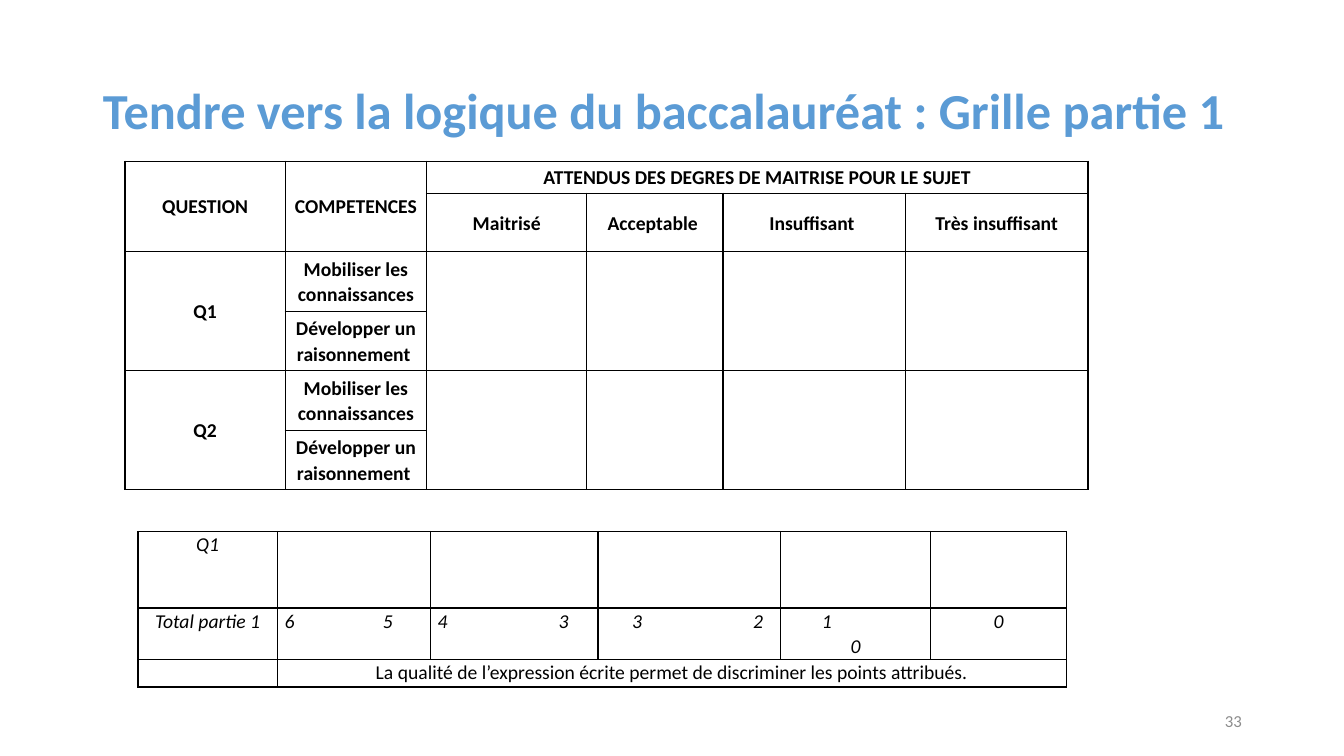
from lxml.etree import SubElement
from pptx import Presentation
from pptx.dml.color import RGBColor
from pptx.enum.text import MSO_ANCHOR as Anchor, MSO_AUTO_SIZE as AutoSize, PP_ALIGN as Align
from pptx.oxml.ns import qn
from pptx.util import Cm, Pt

FONT = "Calibri"
BLACK = "000000"
LEVELS = ["Maitrisé", "Acceptable ", "Insuffisant ", "Très insuffisant"]
SKILLS = ["Mobiliser les connaissances", "Développer un raisonnement "]
QUESTIONS = ["Q1", "Q2"]
SCORES = [("6\t5", [2.48]), ("4\t3", [3.05]), ("\t3\t2", [0.68, 3.73])]
QUALITY = "La qualité de l’expression écrite permet de discriminer les points attribués."


def color(value):
    """Turn a hex string into a colour."""
    return RGBColor.from_string(value)


def add_run(para, text, size, hue, bold=False, italic=False):
    """Add one formatted run to a paragraph."""
    span = para.add_run()
    span.text = text
    font = span.font
    font.name, font.size, font.bold, font.italic = FONT, Pt(size), bold, italic
    font.color.rgb = color(hue)


def style_cell(cell):
    """Give a cell thin black borders, no fill, small margins and a 14 pt empty line."""
    properties = cell._tc.get_or_add_tcPr()
    for side in ("lnL", "lnR", "lnT", "lnB"):
        line = SubElement(properties, qn(f"a:{side}"), w=str(Pt(1)))
        fill = SubElement(line, qn("a:solidFill"))
        SubElement(fill, qn("a:srgbClr"), val=BLACK)
    cell.fill.background()
    cell.margin_left = cell.margin_right = Cm(0.18)
    cell.margin_top = cell.margin_bottom = 0
    SubElement(cell.text_frame.paragraphs[0]._p, qn("a:endParaRPr"), sz="1400")


def add_grid(page, left, top, widths, heights):
    """Add a bordered table with the given column widths and row heights in cm."""
    frame = page.shapes.add_table(len(heights), len(widths), Cm(left), Cm(top),
                                  Cm(sum(widths)), Cm(sum(heights)))
    table = frame.table
    table.first_row = table.horz_banding = False
    for column, width in zip(table.columns, widths):
        column.width = Cm(width)
    for row, height in zip(table.rows, heights):
        row.height = Cm(height)
    for cell in table.iter_cells():
        style_cell(cell)
    return table


def write(para, text, align=Align.CENTER, tabs=(), **look):
    """Write a table paragraph, with tab stops in cm."""
    para.alignment, para.line_spacing = align, 1.07
    if tabs:
        stops = SubElement(para._p.get_or_add_pPr(), qn("a:tabLst"))
        for stop in tabs:
            SubElement(stops, qn("a:tab"), pos=str(Cm(stop)), algn="l")
    add_run(para, text, 14, BLACK, **look)


def write_header(cell, text):
    """Write bold text in the middle of a cell."""
    cell.vertical_anchor = Anchor.MIDDLE
    write(cell.text_frame.paragraphs[0], text, bold=True)


def add_title(page, text):
    """Place and fill the title placeholder."""
    box = page.shapes.title
    box.left, box.top, box.width, box.height = Cm(2.34), Cm(1.02), Cm(29.21), Cm(3.68)
    frame = box.text_frame
    frame.auto_size, frame.vertical_anchor = AutoSize.NONE, Anchor.MIDDLE
    para = frame.paragraphs[0]
    para.alignment, para.line_spacing = Align.LEFT, 0.9
    add_run(para, text, 36, "5B9BD5", bold=True)


def add_skill_grid(page):
    """Add the grid of questions, skills and mastery levels."""
    table = add_grid(page, 3.15, 4.06, [4.04, 3.56, 4.04, 3.43, 4.6, 4.6],
                     [0.81, 1.47] + [1.5] * 4)
    for column, heading in enumerate(["QUESTION", "COMPETENCES"]):
        table.cell(0, column).merge(table.cell(1, column))
        write_header(table.cell(0, column), heading)
    table.cell(0, 2).merge(table.cell(0, 5))
    write_header(table.cell(0, 2), "ATTENDUS DES DEGRES DE MAITRISE POUR LE SUJET")
    for column, level in enumerate(LEVELS, 2):
        write_header(table.cell(1, column), level)
    for index, question in enumerate(QUESTIONS):
        top = 2 + 2 * index
        for column in (0, 2, 3, 4, 5):
            table.cell(top, column).merge(table.cell(top + 1, column))
        write_header(table.cell(top, 0), question)
        for row, skill in enumerate(SKILLS, top):
            write_header(table.cell(row, 1), skill)


def add_score_grid(page):
    """Add the grid of points for part 1."""
    table = add_grid(page, 3.48, 13.39, [3.51, 3.86, 4.22, 4.6, 3.78, 3.43],
                     [1.93, 1.3, 0.69])
    for row, column, text in [(0, 0, "Q1"), (1, 0, "Total partie 1"), (1, 5, "0")]:
        write(table.cell(row, column).text_frame.paragraphs[0], text, italic=True)
    for column, (text, tabs) in enumerate(SCORES, 1):
        write(table.cell(1, column).text_frame.paragraphs[0], text, Align.LEFT, tabs, italic=True)
    low = table.cell(1, 4).text_frame
    write(low.paragraphs[0], "\t1", Align.LEFT, [0.86], italic=True)
    write(low.add_paragraph(), "0", italic=True)
    table.cell(2, 1).merge(table.cell(2, 5))
    write(table.cell(2, 1).text_frame.paragraphs[0], QUALITY)


def add_page_number(page, number):
    """Add the page number at the bottom right."""
    box = page.shapes.add_textbox(Cm(23.93), Cm(17.65), Cm(7.62), Cm(1.02))
    frame = box.text_frame
    frame.word_wrap, frame.vertical_anchor = True, Anchor.MIDDLE
    para = frame.paragraphs[0]
    para.alignment = Align.RIGHT
    add_run(para, number, 12, "8C8C8C")


def main():
    """Build the slide and save it."""
    deck = Presentation()
    deck.slide_width, deck.slide_height = Cm(33.87), Cm(19.05)
    page = deck.slides.add_slide(deck.slide_layouts[5])
    add_title(page, "Tendre vers la logique du baccalauréat : Grille partie 1")
    add_skill_grid(page)
    add_score_grid(page)
    add_page_number(page, "33")
    deck.save("out.pptx")


if __name__ == "__main__":
    main()
